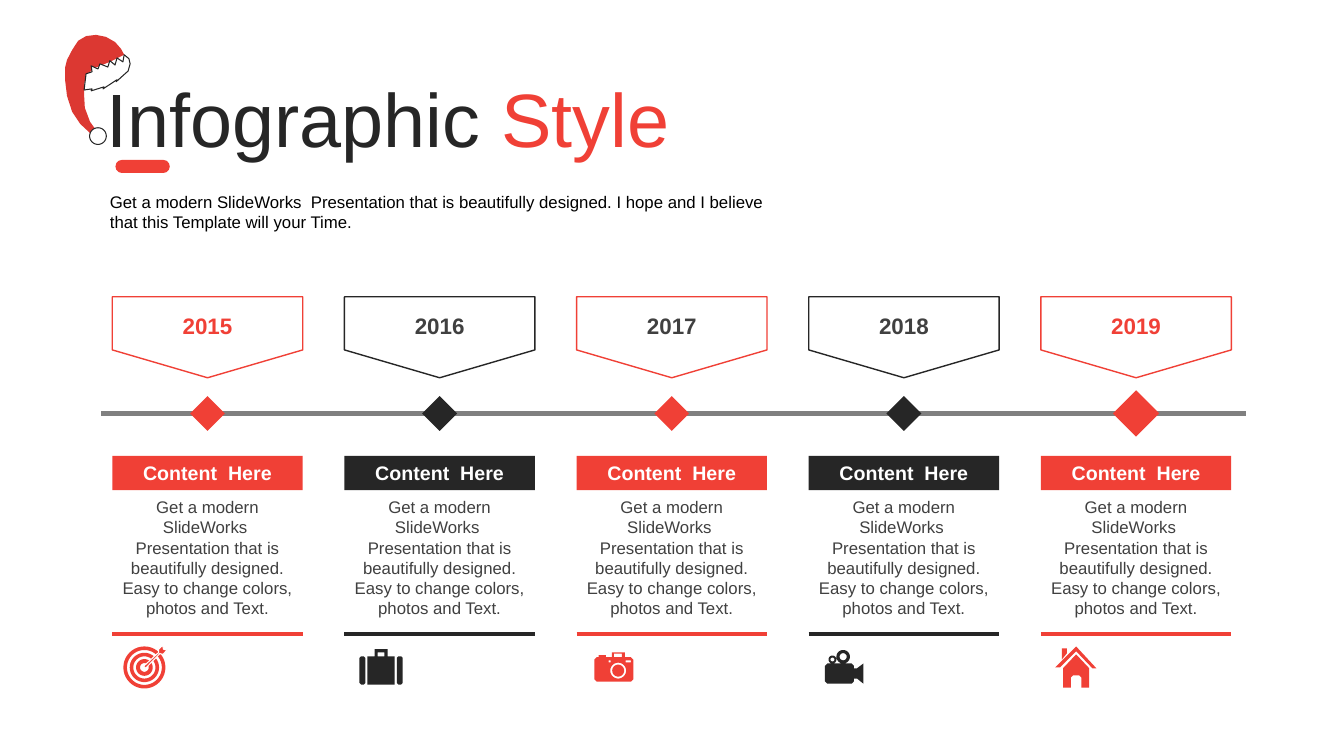
import collections
import dataclasses
import math

import pptx
import pptx.dml.color
import pptx.enum.shapes
import pptx.enum.text
import pptx.oxml
import pptx.util

Cm = pptx.util.Cm
SHAPES = pptx.enum.shapes.MSO_SHAPE
ALIGN = pptx.enum.text.PP_ALIGN
ANCHOR = pptx.enum.text.MSO_ANCHOR

Box = collections.namedtuple("Box", "left top width height")
Milestone = collections.namedtuple("Milestone", "year accent year_color diamond_size icon")


@dataclasses.dataclass(frozen=True)
class Theme:
    font: str = "Arial"
    red: str = "F04036"
    hat_red: str = "DC3832"
    dark: str = "262626"
    body: str = "404040"
    axis: str = "808080"
    black: str = "000000"
    white: str = "FFFFFF"
    title_size: int = 54
    year_size: int = 16
    header_size: int = 14
    text_size: int = 12


THEME = Theme()
INTRO = ("Get a modern SlideWorks  Presentation that is beautifully designed. "
         "I hope and I believe that this Template will your Time.")
DETAIL = ("Get a modern SlideWorks  Presentation that is beautifully designed. "
          "Easy to change colors, photos and Text.")


def rgb(color):
    return pptx.dml.color.RGBColor.from_string(color)


def paint(shape, fill, line=None, line_width=1):
    shape.shadow.inherit = False
    shape.fill.solid()
    shape.fill.fore_color.rgb = rgb(fill)
    if line:
        shape.line.color.rgb = rgb(line)
        shape.line.width = pptx.util.Pt(line_width)
    else:
        shape.line.fill.background()


def add_preset(page, kind, box, fill, line=None):
    shape = page.shapes.add_shape(kind, *map(Cm, box))
    paint(shape, fill, line)
    return shape


def add_outline(page, contours, left, top, fill, line=None, line_width=0.75):
    """Draw closed contours, given in cm from (left, top), as one shape with holes."""
    contours = [[(Cm(left + x), Cm(top + y)) for x, y in points] for points in contours]
    builder = page.shapes.build_freeform(*contours[0][0])
    for points in contours:
        builder.move_to(*points[0])
        builder.add_line_segments(points[1:], close=True)
    paint(builder.convert_to_shape(), fill, line, line_width)


def write(shape, spans, size, align=ALIGN.LEFT, anchor=ANCHOR.TOP, bold=False):
    """Fill a shape with one paragraph made of (text, color) spans."""
    frame = shape.text_frame
    frame.word_wrap = True
    frame.vertical_anchor = anchor
    para = frame.paragraphs[0]
    para.alignment = align
    for text, color in spans:
        span = para.add_run()
        span.text = text
        formats = {"name": THEME.font, "size": pptx.util.Pt(size), "bold": bold}
        for name, value in formats.items():
            setattr(span.font, name, value)
        span.font.color.rgb = rgb(color)


def add_text(page, box, spans, size, **layout):
    write(page.shapes.add_textbox(*map(Cm, box)), spans, size, **layout)


def add_rule(page, left, right, y, color):
    line = page.shapes.add_connector(
        pptx.enum.shapes.MSO_CONNECTOR.STRAIGHT, Cm(left), Cm(y), Cm(right), Cm(y))
    line.line.color.rgb = rgb(color)
    line.line.width = pptx.util.Pt(3)
    properties = line.element.spPr
    properties.append(pptx.oxml.parse_xml(
        '<a:effectLst xmlns:a="http://schemas.openxmlformats.org/drawingml/2006/main"/>'))


def circle(x, y, radius, steps=40):
    angles = [2 * math.pi * step / steps for step in range(steps)]
    return [(x + radius * math.cos(a), y + radius * math.sin(a)) for a in angles]


def block(left, top, right, bottom, cut=0):
    """Rectangle with its corners cut off by the given length."""
    if not cut:
        return [(left, top), (right, top), (right, bottom), (left, bottom)]
    return [(left + cut, top), (right - cut, top), (right, top + cut), (right, bottom - cut),
            (right - cut, bottom), (left + cut, bottom), (left, bottom - cut), (left, top + cut)]


def draw_target(page, left, top, color):
    rings = [circle(0.81, 0.56, radius) for radius in (0.53, 0.44, 0.37, 0.28, 0.21, 0.11)]
    dart = [(0.79, 0.53), (1.17, 0.18), (1.17, 0.1), (1.27, 0), (1.29, 0.1),
            (1.38, 0.12), (1.28, 0.23), (1.2, 0.21), (0.84, 0.58)]
    add_outline(page, rings, left, top, color)
    add_outline(page, [dart], left, top, color, THEME.white)


def draw_suitcase(page, left, top, color):
    add_outline(page, [block(0.38, 0.28, 0.53, 0.99, 0.04), block(0.58, 0.28, 1.27, 0.99),
                       block(1.32, 0.28, 1.47, 0.99, 0.04), block(0.76, 0.1, 1.09, 0.28),
                       block(0.84, 0.18, 1.01, 0.28)], left, top, color)


def draw_camera(page, left, top, color):
    add_outline(page, [block(0.45, 0.3, 1.43, 0.92, 0.06), block(0.56, 0.25, 0.74, 0.3),
                       block(0.89, 0.18, 1.22, 0.3), block(0.94, 0.21, 1.14, 0.3),
                       block(0.81, 0.38, 0.86, 0.43), block(1.24, 0.38, 1.37, 0.43),
                       circle(1.05, 0.64, 0.2), circle(1.05, 0.64, 0.15)], left, top, color)


def draw_video(page, left, top, color):
    lens = [(1.14, 0.58), (1.22, 0.58), (1.38, 0.46), (1.38, 0.97), (1.22, 0.84), (1.14, 0.84)]
    add_outline(page, [block(0.41, 0.46, 1.14, 0.97, 0.06), lens,
                       circle(0.87, 0.29, 0.17), circle(0.87, 0.29, 0.09),
                       circle(0.6, 0.36, 0.1), circle(0.6, 0.36, 0.05)], left, top, color)


def draw_house(page, left, top, color):
    walls = [(0.89, 0.23), (1.22, 0.58), (1.22, 1.07), (1.02, 1.07), (1.02, 0.81), (0.97, 0.76),
             (0.81, 0.76), (0.76, 0.81), (0.76, 1.07), (0.56, 1.07), (0.56, 0.58)]
    chimney = [(0.53, 0.08), (0.66, 0.08), (0.66, 0.2), (0.53, 0.36)]
    roof = [(0.89, 0.03), (1.4, 0.58), (1.3, 0.58), (0.89, 0.15), (0.48, 0.56), (0.36, 0.56)]
    add_outline(page, [walls, chimney, roof], left, top, color)


def draw_hat(page, left, top):
    cap = [(0, 0.83), (0.05, 0.63), (0.18, 0.38), (0.33, 0.15), (0.53, 0.03), (0.78, 0),
           (1.03, 0.05), (1.26, 0.18), (1.41, 0.35), (1.49, 0.5), (1.13, 0.68), (0.76, 0.83),
           (0.53, 1.01), (0.48, 1.26), (0.48, 1.51), (0.5, 1.84), (0.63, 2.19), (0.81, 2.44),
           (0.81, 2.55), (0.68, 2.52), (0.38, 2.24), (0.18, 1.94), (0.05, 1.54), (0, 1.13)]
    brim = [(1.49, 0.5), (1.46, 0.68), (1.31, 0.58), (1.26, 0.76), (1.13, 0.65), (1.08, 0.81),
            (0.88, 0.73), (0.83, 0.86), (0.66, 0.78), (0.68, 0.93), (0.53, 0.98), (0.48, 1.39),
            (0.68, 1.36), (0.66, 1.41), (0.98, 1.31), (0.96, 1.36), (1.31, 1.13), (1.29, 1.18),
            (1.59, 0.91), (1.64, 0.73), (1.61, 0.6)]
    add_outline(page, [cap], left, top, THEME.hat_red)
    for trim in (brim, circle(0.83, 2.55, 0.21)):
        add_outline(page, [trim], left, top, THEME.white, THEME.dark)


def draw_heading(page, box):
    left, top, width, height = box
    add_text(page, Box(left, top, width, 2.57),
             [("Infographic", THEME.dark), (" Style", THEME.red)],
             THEME.title_size, anchor=ANCHOR.MIDDLE)
    add_text(page, Box(left + 0.08, top + 3.02, width - 0.08, height - 3.02),
             [(INTRO, THEME.black)], THEME.text_size)
    draw_hat(page, left - 0.8, top - 0.8)
    bar = add_preset(page, SHAPES.ROUNDED_RECTANGLE,
                     Box(left + 0.47, top + 2.35, 1.37, 0.33), THEME.red)
    bar.adjustments[0] = 0.5


def draw_milestone(page, box, milestone):
    left, top, width, height = box
    accent = milestone.accent
    center = left + width / 2
    depth = 2.04
    banner = add_preset(page, SHAPES.PENTAGON,
                        Box(center - depth / 2, top + (depth - width) / 2, depth, width),
                        THEME.white, accent)
    banner.rotation = 90
    banner.adjustments[0] = 0.344
    add_text(page, Box(center - 1.18, top + 0.27, 2.36, 0.94),
             [(milestone.year, milestone.year_color)], THEME.year_size,
             align=ALIGN.CENTER, bold=True)
    size = milestone.diamond_size
    add_preset(page, SHAPES.DIAMOND,
               Box(center - size / 2, top + 2.94 - size / 2, size, size), accent)
    header = add_preset(page, SHAPES.RECTANGLE, Box(left, top + 4.01, width, 0.86), accent)
    write(header, [("Content  Here", THEME.white)], THEME.header_size,
          align=ALIGN.CENTER, anchor=ANCHOR.MIDDLE, bold=True)
    add_text(page, Box(left, top + 4.92, width, 3.33), [(DETAIL, THEME.body)],
             THEME.text_size, align=ALIGN.CENTER)
    add_rule(page, left, left + width, top + 8.49, accent)
    milestone.icon(page, left, top + height - 1.12, accent)


def draw_timeline(page, box):
    milestones = [
        Milestone("2015", THEME.red, THEME.red, 0.88, draw_target),
        Milestone("2016", THEME.dark, THEME.body, 0.88, draw_suitcase),
        Milestone("2017", THEME.red, THEME.body, 0.88, draw_camera),
        Milestone("2018", THEME.dark, THEME.body, 0.88, draw_video),
        Milestone("2019", THEME.red, THEME.red, 1.17, draw_house),
    ]
    column_width = 4.8
    pitch = (box.width - column_width) / (len(milestones) - 1)
    add_rule(page, box.left - 0.28, box.left + box.width + 0.36, box.top + 2.94, THEME.axis)
    for index, milestone in enumerate(milestones):
        column = Box(box.left + index * pitch, box.top, column_width, box.height)
        draw_milestone(page, column, milestone)


def main():
    deck = pptx.Presentation()
    deck.slide_width, deck.slide_height = Cm(33.87), Cm(19.05)
    page = deck.slides.add_slide(deck.slide_layouts[6])
    draw_heading(page, Box(2.44, 1.68, 17.2, 4.29))
    draw_timeline(page, Box(2.83, 7.48, 28.2, 9.9))
    deck.save("out.pptx")


if __name__ == "__main__":
    main()
